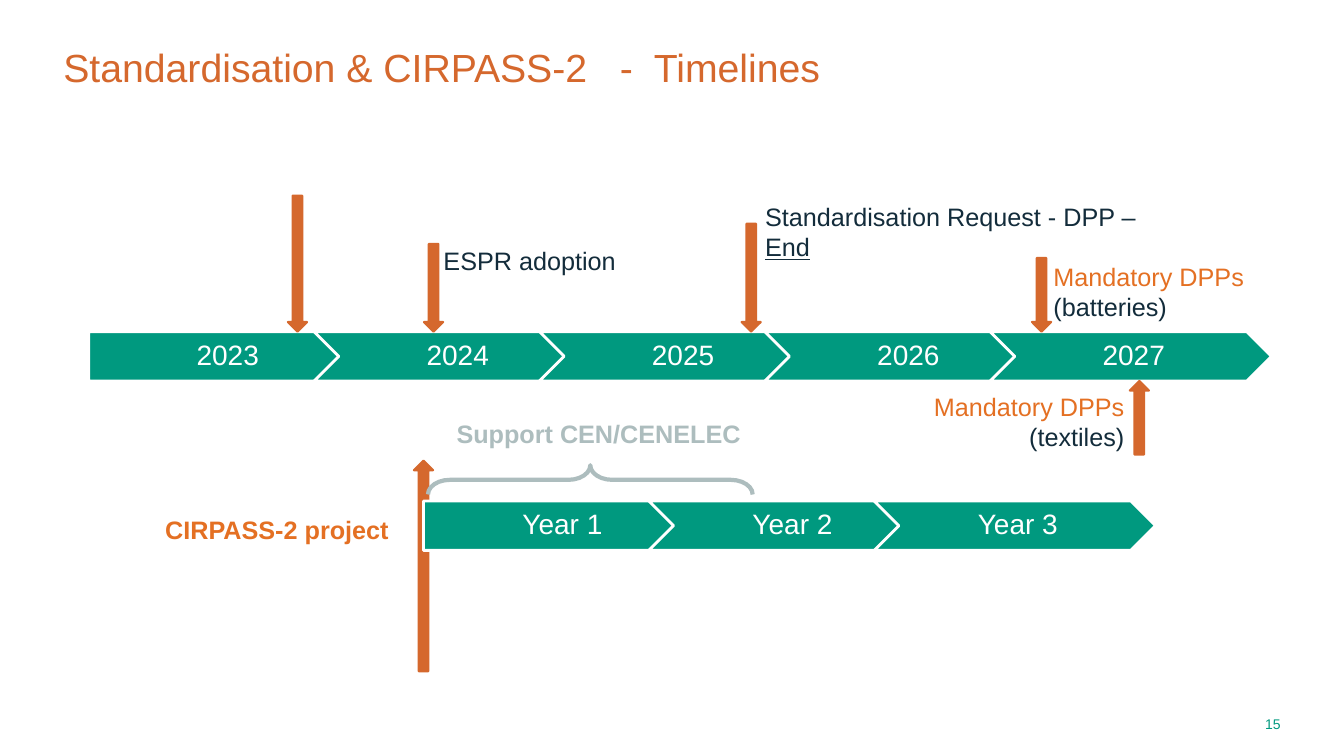
from pptx import Presentation
from pptx.dml.color import RGBColor
from pptx.enum.shapes import MSO_SHAPE
from pptx.enum.text import MSO_ANCHOR, PP_ALIGN
from pptx.util import Inches, Pt

GREEN, RUST, ORANGE = "00997F", "D5682D", "E47023"
NAVY, GREY, WHITE = "132C3B", "ADBDBE", "FFFFFF"
LEFT, RIGHT = PP_ALIGN.LEFT, PP_ALIGN.RIGHT

STEP, WIDE, HIGH = 2.235, 2.79, 0.49
YEARS = (0.88, 3.29, ["2023", "2024", "2025", "2026", "2027"])
PROJECT = (4.2, 4.97, ["Year 1", "Year 2", "Year 3"])
TOP = YEARS[1]
BASE = TOP + HIGH
THICK = 0.19

DOWN = [(2.95, 1.35), (4.3, 0.87), (7.45, 1.07), (10.33, 0.73)]
UP = [(4.2, 4.57, 2.09), (11.3, BASE, 0.73)]

TITLE = ((0.53, 0.43, 9.95, 0.92), 28, LEFT, False,
         [("Standardisation & CIRPASS-2   -  Timelines", RUST)])
NOTES = [
    ((4.3, 2.38, 2.19, 0.4), 18, LEFT, False, [("ESPR adoption", NAVY)]),
    ((7.49, 1.95, 4.34, 0.71), 18, LEFT, False,
     [("Standardisation Request - DPP – ", NAVY), ("End", NAVY, True)]),
    ((10.35, 2.54, 2.42, 0.71), 18, LEFT, False,
     [("Mandatory DPPs ", ORANGE), ("(batteries)", NAVY)]),
    ((8.83, 3.83, 2.42, 0.71), 18, RIGHT, False,
     [("Mandatory DPPs ", ORANGE), ("(textiles)", NAVY)]),
    ((1.54, 5.05, 2.44, 0.4), 18, LEFT, True,
     [("CIRPASS-2 project", ORANGE)]),
    ((4.43, 4.1, 3.04, 0.4), 18, LEFT, True,
     [("Support CEN/CENELEC", GREY)]),
    ((12.32, 7.06, 0.48, 0.25), 10, RIGHT, False, [("15", GREEN)]),
]


def tint(code):
    return RGBColor.from_string(code)


def draw(shapes, kind, box, fill, line, width):
    shape = shapes.add_shape(kind, *map(Inches, box))
    shape.shadow.inherit = False
    if fill:
        shape.fill.solid()
        shape.fill.fore_color.rgb = tint(fill)
    else:
        shape.fill.background()
    shape.line.color.rgb = tint(line)
    shape.line.width = Pt(width)
    return shape


def band(slide, left, top, names):
    shapes = slide.shapes.add_group_shape().shapes
    for i, name in enumerate(names):
        kind = MSO_SHAPE.CHEVRON if i else MSO_SHAPE.PENTAGON
        box = (left + i * STEP, top, WIDE, HIGH)
        frame = draw(shapes, kind, box, GREEN, WHITE, 2).text_frame
        frame.margin_left = Inches(0.09 if i else 0.12)
        frame.margin_right = Inches(0.03)
        frame.margin_top = frame.margin_bottom = Inches(0.06)
        frame.vertical_anchor = MSO_ANCHOR.MIDDLE
        para = frame.paragraphs[0]
        para.text = name
        para.alignment = PP_ALIGN.CENTER
        para.line_spacing = 0.9
        para.font.name, para.font.size = "Arial", Pt(20)
        para.font.color.rgb = tint(WHITE)


def arrow(slide, kind, mid, top, size):
    box = (mid - THICK / 2, top, THICK, size)
    draw(slide.shapes, kind, box, RUST, RUST, 1.5)


def note(slide, box, size, align, bold, runs):
    frame = slide.shapes.add_textbox(*map(Inches, box)).text_frame
    frame.word_wrap = True
    para = frame.paragraphs[0]
    para.alignment = align
    para.font.name, para.font.size = "Arial", Pt(size)
    para.font.bold = bold
    for text, color, *under in runs:
        run = para.add_run()
        run.text = text
        run.font.color.rgb = tint(color)
        if under:
            run.font.underline = True
    return frame


def main():
    deck = Presentation()
    deck.slide_width, deck.slide_height = Inches(13.33), Inches(7.5)
    slide = deck.slides.add_slide(deck.slide_layouts[6])
    note(slide, *TITLE).paragraphs[0].line_spacing = 0.9
    band(slide, *YEARS)
    for mid, size in DOWN:
        arrow(slide, MSO_SHAPE.DOWN_ARROW, mid, TOP - size, size)
    for mid, top, size in UP:
        arrow(slide, MSO_SHAPE.UP_ARROW, mid, top, size)
    band(slide, *PROJECT)
    for item in NOTES:
        frame = note(slide, *item)
    frame.vertical_anchor = MSO_ANCHOR.MIDDLE
    brace = draw(slide.shapes, MSO_SHAPE.RIGHT_BRACE,
                 (5.71, 3.15, 0.29, 3.22), None, GREY, 3)
    brace.rotation = 270
    brace.adjustments[0] = 0.75
    deck.save("out.pptx")


if __name__ == "__main__":
    main()
